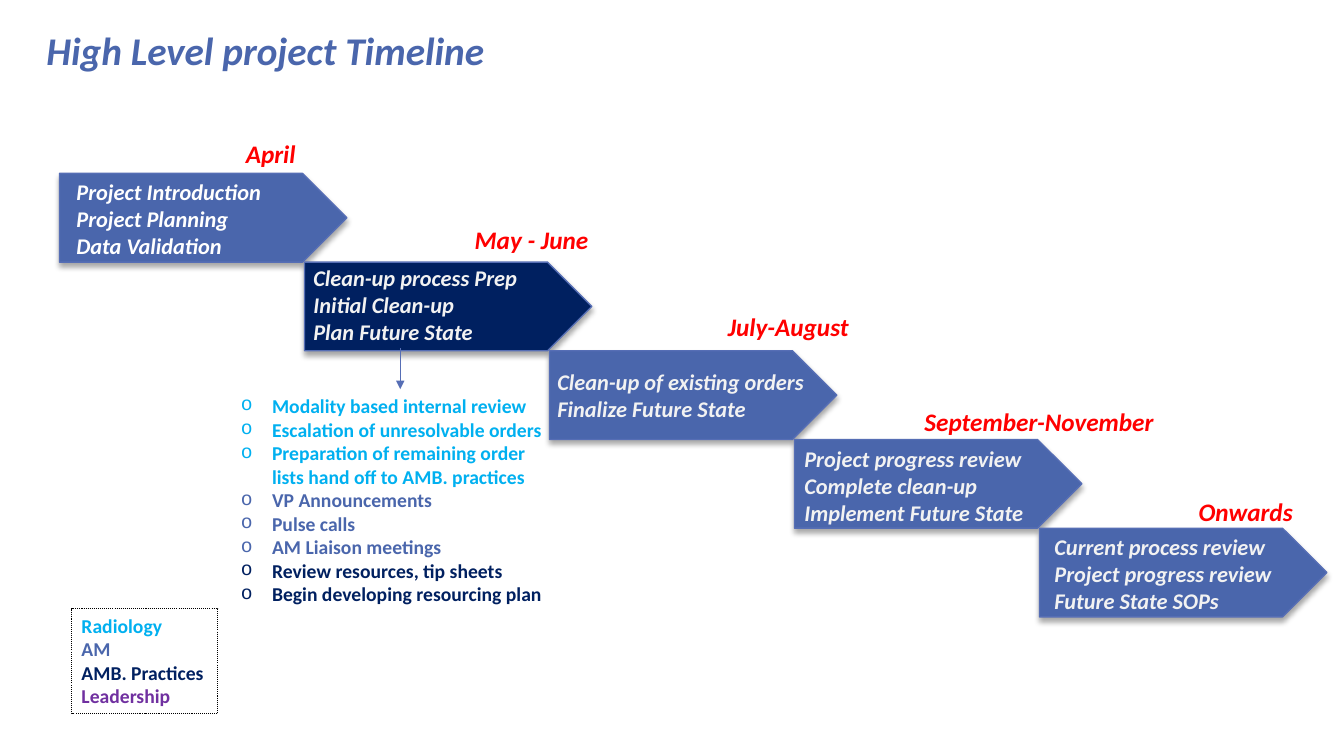
from dataclasses import dataclass

from lxml.etree import SubElement
from pptx import Presentation
from pptx.dml.color import RGBColor
from pptx.enum.dml import MSO_LINE
from pptx.enum.shapes import MSO_CONNECTOR as Connector, MSO_SHAPE as Shape
from pptx.enum.text import MSO_ANCHOR as Anchor, MSO_AUTO_SIZE as AutoSize, PP_ALIGN as Align
from pptx.oxml.ns import qn
from pptx.util import Emu, Pt

PX = 9144  # 100 px to the inch
FONT = "Calibri"
COLORS = {
    "blue": "4A66AC", "navy": "002060", "outline": "566EB5", "red": "FF0000",
    "sky": "00B0F0", "purple": "7030A0", "pale": "F2F2F2", "white": "FFFFFF",
    "black": "000000",
}
ARROW_LEFT, ARROW_TOP, ARROW_WIDTH, ARROW_HEIGHT = 59, 172, 285, 88
STEP_X, STEP_Y = 243, 88


@dataclass(frozen=True)
class Area:
    left: int
    top: int
    width: int
    height: int

    def emu(self) -> tuple[Emu, ...]:
        return tuple(Emu(n * PX) for n in (self.left, self.top, self.width, self.height))


@dataclass(frozen=True)
class Line:
    text: str
    color: str


@dataclass(frozen=True)
class Phase:
    month: str
    month_area: Area
    tasks: tuple[str, ...]
    tasks_area: Area
    fill: str = "blue"
    ink: str = "pale"


PHASES = (
    Phase("April", Area(234, 132, 107, 40),
          ("Project Introduction", "Project Planning", "Data Validation"),
          Area(66, 172, 323, 94), ink="white"),
    Phase("May - June", Area(461, 218, 142, 40),
          ("Clean-up process Prep", "Initial Clean-up", "Plan Future State"),
          Area(301, 257, 323, 91), fill="navy"),
    Phase("July-August", Area(712, 304, 142, 40),
          ("Clean-up of existing orders", "Finalize Future State"),
          Area(543, 360, 323, 64)),
    Phase("September-November", Area(907, 398, 258, 40),
          ("Project progress review", "Complete clean-up", "Implement Future State"),
          Area(788, 437, 323, 91)),
    Phase("Onwards", Area(1179, 487, 150, 40),
          ("Current process review", "Project progress review", "Future State SOPs"),
          Area(1036, 524, 290, 91)),
)
CLEAN_UP_STEPS = (
    Line("Modality based internal review", "sky"),
    Line("Escalation of unresolvable orders", "sky"),
    Line("Preparation of remaining order lists hand off to AMB. practices", "sky"),
    Line("VP Announcements", "blue"),
    Line("Pulse calls", "blue"),
    Line("AM Liaison meetings", "blue"),
    Line("Review resources, tip sheets", "navy"),
    Line("Begin developing resourcing plan", "navy"),
)
TEAMS = (
    Line("Radiology", "sky"),
    Line("AM", "blue"),
    Line("AMB. Practices", "navy"),
    Line("Leadership", "purple"),
)


def rgb(name: str) -> RGBColor:
    return RGBColor.from_string(COLORS[name])


def add_bullet(para) -> None:
    props = para._p.get_or_add_pPr()
    props.set("marL", str(31 * PX))
    props.set("indent", str(-31 * PX))
    SubElement(props, qn("a:buFont"), typeface="Courier New")
    SubElement(props, qn("a:buChar"), char="o")


def write(frame, lines: tuple[Line, ...], size: int, italic: bool = False,
          bullets: bool = False) -> None:
    frame.word_wrap = True
    for index, line in enumerate(lines):
        para = frame.add_paragraph() if index else frame.paragraphs[0]
        para.alignment = Align.LEFT
        if bullets:
            add_bullet(para)
        span = para.add_run()
        span.text = line.text
        font = span.font
        font.name, font.size, font.bold, font.italic = FONT, Pt(size), True, italic
        font.color.rgb = rgb(line.color)


def add_text(page, area: Area, lines: tuple[Line, ...], size: int, italic: bool = True,
             bullets: bool = False):
    box = page.shapes.add_textbox(*area.emu())
    write(box.text_frame, lines, size, italic, bullets)
    return box


def add_shadow(shape) -> None:
    shape.shadow.inherit = False
    effects = shape._element.spPr.find(qn("a:effectLst"))
    shadow = SubElement(effects, qn("a:outerShdw"), blurRad=str(Pt(4)), dist=str(Pt(3)),
                        dir="5400000", rotWithShape="0")
    color = SubElement(shadow, qn("a:srgbClr"), val=COLORS["black"])
    SubElement(color, qn("a:alpha"), val="35000")


def add_phase_arrow(page, index: int, fill: str) -> None:
    area = Area(ARROW_LEFT + index * STEP_X, ARROW_TOP + index * STEP_Y,
                ARROW_WIDTH, ARROW_HEIGHT)
    arrow = page.shapes.add_shape(Shape.PENTAGON, *area.emu())
    arrow.fill.solid()
    arrow.fill.fore_color.rgb = rgb(fill)
    arrow.line.color.rgb = rgb("outline")
    arrow.line.width = Pt(1)
    add_shadow(arrow)


def add_pointer(page, target, left: int, top: int, bottom: int) -> None:
    """Draw an arrow down to the top middle of the target."""
    x = Emu(left * PX)
    pointer = page.shapes.add_connector(Connector.STRAIGHT, x, Emu(top * PX),
                                        x, Emu(bottom * PX))
    pointer.end_connect(target, 0)
    pointer.line.color.rgb = rgb("outline")
    pointer.line.width = Pt(1)
    SubElement(pointer.line._get_or_add_ln(), qn("a:tailEnd"), type="triangle")
    SubElement(pointer._element.spPr, qn("a:effectLst"))


def add_legend(page) -> None:
    legend = page.shapes.add_shape(Shape.RECTANGLE, *Area(71, 604, 145, 104).emu())
    legend.shadow.inherit = False
    legend.fill.background()
    legend.line.color.rgb = rgb("black")
    legend.line.width = Pt(0.75)
    legend.line.dash_style = MSO_LINE.ROUND_DOT
    legend.text_frame.vertical_anchor = Anchor.TOP
    write(legend.text_frame, TEAMS, 14)


def add_title(page) -> None:
    title = page.shapes.title
    title.left, title.top, title.width, title.height = Area(36, 13, 1015, 72).emu()
    title.text_frame.auto_size = AutoSize.NONE
    title.text_frame.vertical_anchor = Anchor.MIDDLE
    write(title.text_frame, (Line("High Level project Timeline", "blue"),), 28, italic=True)


def main() -> None:
    deck = Presentation()
    deck.slide_width, deck.slide_height = Emu(1333 * PX), Emu(750 * PX)
    page = deck.slides.add_slide(deck.slide_layouts.get_by_name("Title Only"))
    add_title(page)
    for index, phase in enumerate(PHASES):
        add_phase_arrow(page, index, phase.fill)
    for phase in PHASES:
        add_text(page, phase.month_area, (Line(phase.month, "red"),), 18)
        tasks = tuple(Line(task, phase.ink) for task in phase.tasks)
        add_text(page, phase.tasks_area, tasks, 16)
    steps = add_text(page, Area(229, 386, 336, 222), CLEAN_UP_STEPS, 14,
                     italic=False, bullets=True)
    add_pointer(page, steps, 397, 345, 386)
    add_legend(page)
    deck.save("out.pptx")


if __name__ == "__main__":
    main()
